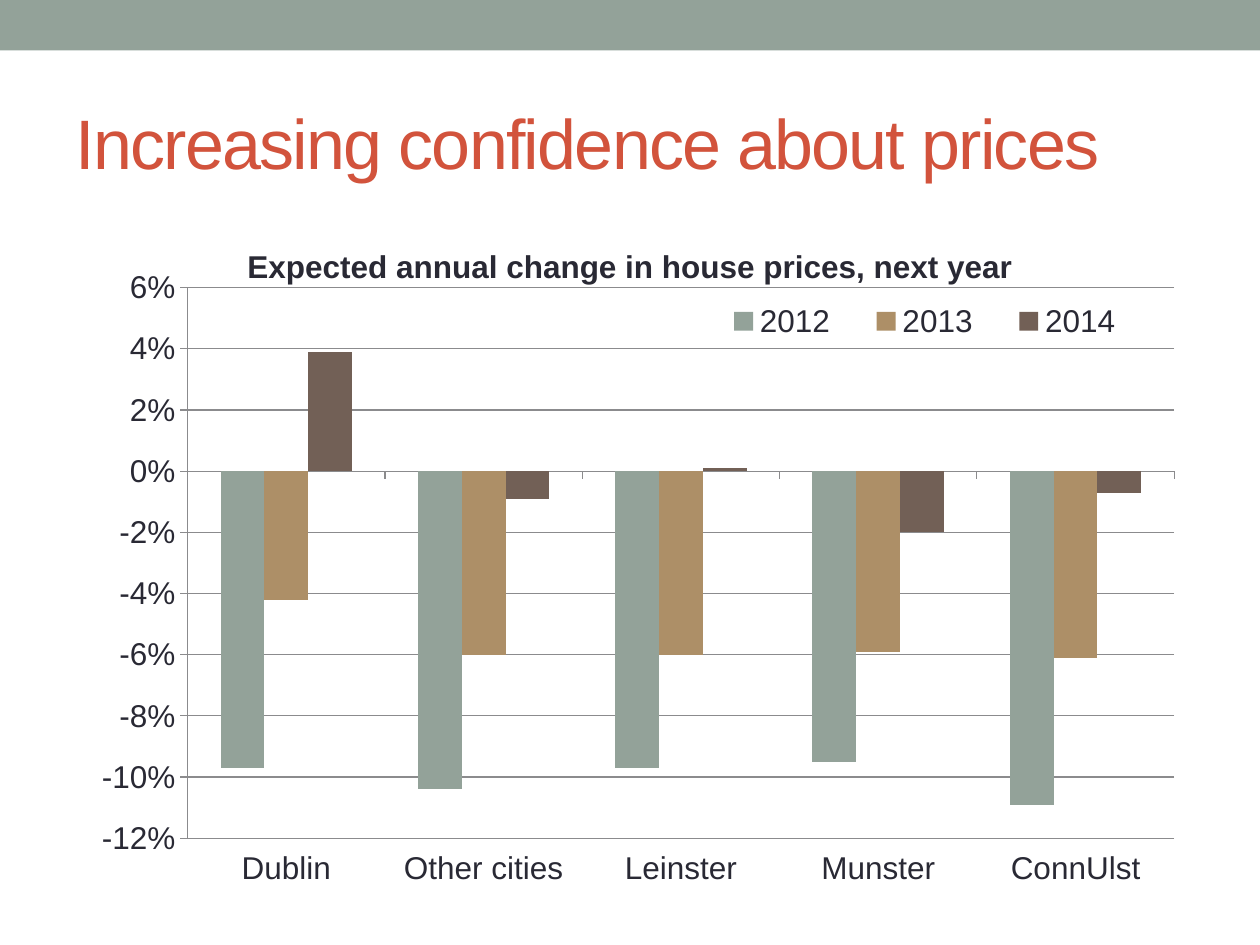
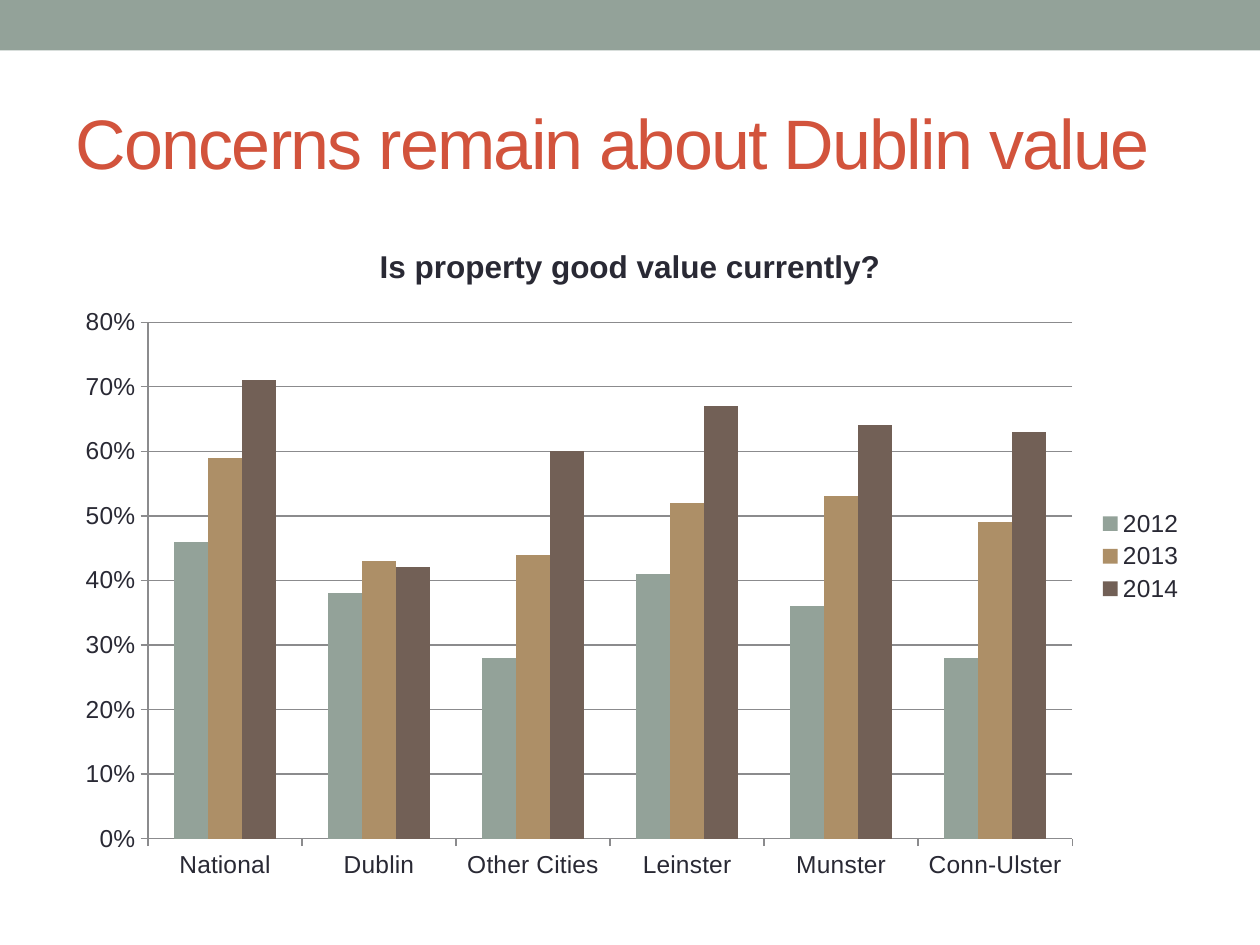
"""Build two slides on house price expectations and property value."""
from dataclasses import dataclass

from lxml import etree
from pptx import Presentation
from pptx.chart.data import CategoryChartData
from pptx.dml.color import RGBColor
from pptx.enum.chart import XL_CHART_TYPE, XL_LEGEND_POSITION, XL_TICK_LABEL_POSITION, XL_TICK_MARK
from pptx.enum.shapes import MSO_SHAPE
from pptx.enum.text import MSO_ANCHOR, MSO_AUTO_SIZE, PP_ALIGN
from pptx.oxml.ns import qn
from pptx.util import Inches, Pt

RECT = MSO_SHAPE.RECTANGLE
COLUMNS = XL_CHART_TYPE.COLUMN_CLUSTERED
LEGEND_RIGHT = XL_LEGEND_POSITION.RIGHT
LABELS_LOW = XL_TICK_LABEL_POSITION.LOW
TICK_OUT, TICK_NONE = XL_TICK_MARK.OUTSIDE, XL_TICK_MARK.NONE
MIDDLE, LEFT = MSO_ANCHOR.MIDDLE, PP_ALIGN.LEFT
NO_FIT = MSO_AUTO_SIZE.NONE
TITLE_ONLY = 5
YEARS = ("2012", "2013", "2014")


@dataclass(frozen=True)
class Theme:
    font: str = "Arial"
    band: RGBColor = RGBColor.from_string("93A299")
    title: RGBColor = RGBColor.from_string("D2533C")
    text: RGBColor = RGBColor.from_string("292934")
    line: RGBColor = RGBColor.from_string("8B8B8D")
    series: tuple = tuple(map(RGBColor.from_string, ("93A299", "AD8F67", "726056")))
    title_size: int = 40
    chart_title_size: int = 18
    title_spacing: int = -100


class Deck:
    def __init__(self, theme):
        self.theme = theme
        self.prs = Presentation()
        self.prs.slide_width, self.prs.slide_height = Inches(10), Inches(7.5)
        self.slide = None

    def add_slide(self, title):
        self.slide = self.prs.slides.add_slide(self.prs.slide_layouts[TITLE_ONLY])
        self.add_band()
        self.set_title(title)

    def add_band(self):
        sp = self.slide.shapes.add_shape(RECT, 0, 0, Inches(10), Inches(0.4))
        sp.shadow.inherit = False
        sp.fill.solid()
        sp.fill.fore_color.rgb = self.theme.band
        sp.line.fill.background()

    def set_title(self, text):
        sp = self.slide.shapes.title
        sp.left, sp.top, sp.width, sp.height = map(Inches, (0.5, 0.58, 9, 1.08))
        tf = sp.text_frame
        tf.text = text
        tf.word_wrap, tf.auto_size, tf.vertical_anchor = True, NO_FIT, MIDDLE
        p = tf.paragraphs[0]
        p.alignment = LEFT
        self.set_font(p.font, self.theme.title_size, self.theme.title, False)
        p.runs[0]._r.get_or_add_rPr().set("spc", str(self.theme.title_spacing))

    def set_font(self, font, size, color, bold):
        font.name, font.size, font.bold = self.theme.font, Pt(size), bold
        font.color.rgb = color

    def set_layout(self, parent, index, box, inner=False):
        for old in parent.findall(qn("c:layout")):
            parent.remove(old)
        layout = etree.Element(qn("c:layout"))
        manual = etree.SubElement(layout, qn("c:manualLayout"))
        settings = [("layoutTarget", "inner")] if inner else []
        settings += [("xMode", "edge"), ("yMode", "edge"), *zip("xywh", box)]
        for tag, value in settings:
            etree.SubElement(manual, qn(f"c:{tag}")).set("val", str(value))
        parent.insert(index, layout)

    def add_chart(self, title, categories, values, size, scale, plot_box=None, legend_box=None):
        data = CategoryChartData(number_format="0%")
        data.categories = categories
        for year, numbers in zip(YEARS, values):
            data.add_series(year, numbers)
        box = map(Inches, (0.5, 1.75, 9, 5.33))
        chart = self.slide.shapes.add_chart(COLUMNS, *box, data).chart
        self.set_font(chart.font, size, self.theme.text, False)

        chart.has_title = True
        tf = chart.chart_title.text_frame
        tf.text = title
        self.set_font(tf.paragraphs[0].font, self.theme.chart_title_size, self.theme.text, True)

        plot = chart.plots[0]
        plot.gap_width, plot.vary_by_categories = 150, False
        for series, color in zip(plot.series, self.theme.series):
            series.invert_if_negative = False
            series.format.fill.solid()
            series.format.fill.fore_color.rgb = color

        self.style_axes(chart, scale)
        chart.has_legend = True
        chart.legend.position = LEGEND_RIGHT
        chart.legend.include_in_layout = False
        if plot_box:
            plot_area = chart._chartSpace.find(f".//{qn('c:plotArea')}")
            self.set_layout(plot_area, 0, plot_box, inner=True)
        if legend_box:
            self.set_layout(chart.legend._element, 1, legend_box)
        return chart

    def style_axes(self, chart, scale):
        axis = chart.value_axis
        axis.minimum_scale, axis.maximum_scale, axis.major_unit = scale
        axis.has_major_gridlines = True
        axis.tick_labels.number_format = "0%"
        axis.tick_labels.number_format_is_linked = False
        lines = [axis.major_gridlines.format.line]
        for axis in (chart.value_axis, chart.category_axis):
            axis.major_tick_mark, axis.minor_tick_mark = TICK_OUT, TICK_NONE
            lines.append(axis.format.line)
        for line in lines:
            line.color.rgb = self.theme.line
            line.width = Pt(0.75)


def main():
    deck = Deck(Theme())

    deck.add_slide("Increasing confidence about prices")
    chart = deck.add_chart(
        "Expected annual change in house prices, next year",
        ("Dublin", "Other cities", "Leinster", "Munster", "ConnUlst"),
        ((-0.097, -0.104, -0.097, -0.095, -0.109),
         (-0.042, -0.06, -0.06, -0.059, -0.061),
         (0.039, -0.009, 0.001, -0.02, -0.007)),
        size=18, scale=(-0.12, 0.06, 0.02),
        plot_box=(0.11, 0.1, 0.87, 0.82), legend_box=(0.56, 0.12, 0.4, 0.06))
    chart.category_axis.tick_label_position = LABELS_LOW

    deck.add_slide("Concerns remain about Dublin value")
    deck.add_chart(
        "Is property good value currently?",
        ("National", "Dublin", "Other Cities", "Leinster", "Munster", "Conn-Ulster"),
        ((0.46, 0.38, 0.28, 0.41, 0.36, 0.28),
         (0.59, 0.43, 0.44, 0.52, 0.53, 0.49),
         (0.71, 0.42, 0.6, 0.67, 0.64, 0.63)),
        size=14, scale=(0, 0.8, 0.1))

    deck.prs.save("out.pptx")


if __name__ == "__main__":
    main()
